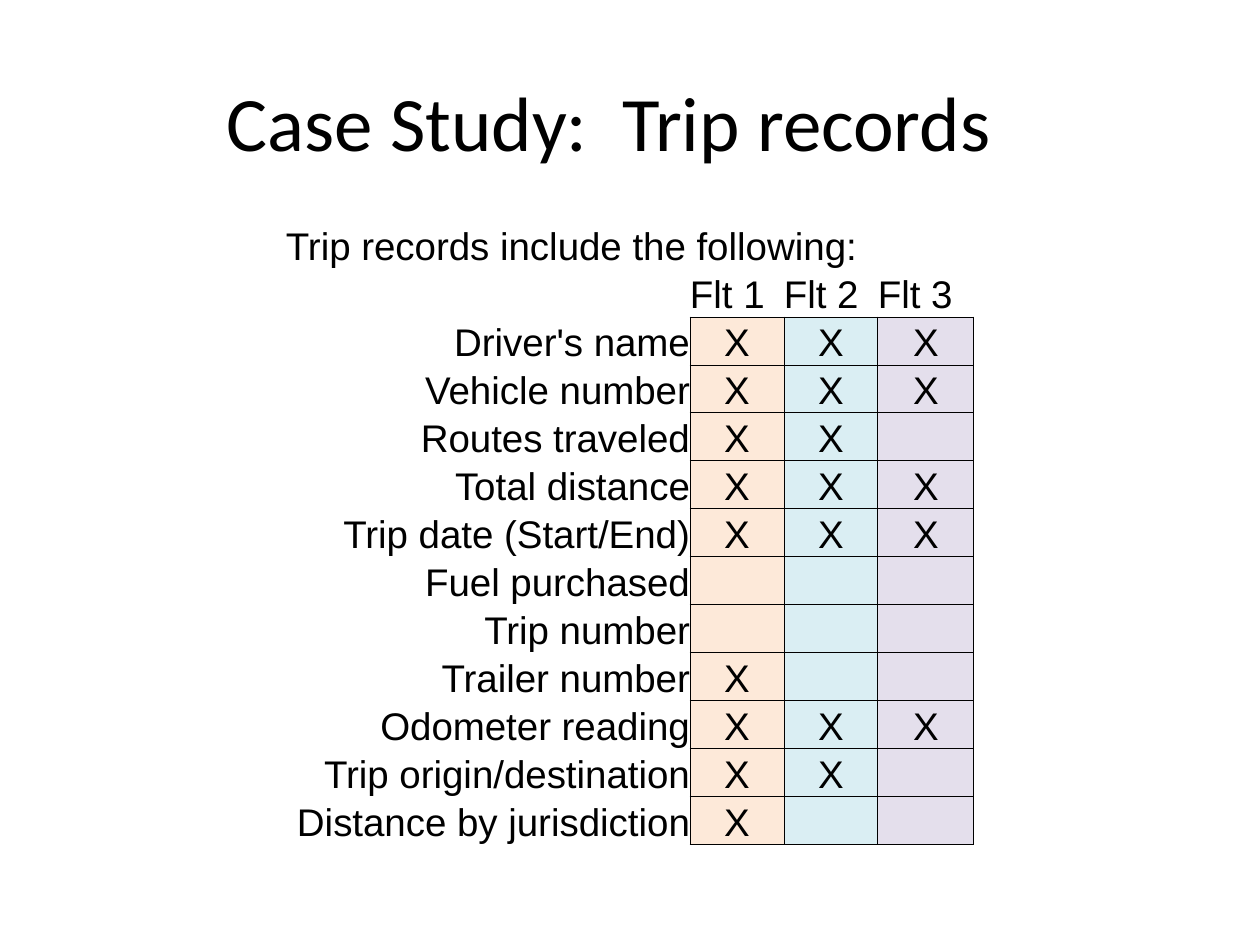
"""Build the trip records case study slide with its fleet checklist table."""
from lxml.etree import SubElement
from pptx import Presentation
from pptx.dml.color import RGBColor
from pptx.enum.text import MSO_ANCHOR, PP_ALIGN
from pptx.oxml.ns import qn
from pptx.util import Pt

SCALE = 914400 / 126
BLACK = "000000"
FLEET_FILLS = ["FDE9D9", "DAEEF3", "E4DFEC"]
COLUMN_WIDTHS = [404, 94, 94, 96]
ROW_HEIGHT = 48
RECORDS = [
    ("Driver's name", "X", "X", "X"),
    ("Vehicle number", "X", "X", "X"),
    ("Routes traveled", "X", "X", ""),
    ("Total distance", "X", "X", "X"),
    ("Trip date (Start/End)", "X", "X", "X"),
    ("Fuel purchased", "", "", ""),
    ("Trip number", "", "", ""),
    ("Trailer number", "X", "", ""),
    ("Odometer reading", "X", "X", "X"),
    ("Trip origin/destination", "X", "X", ""),
    ("Distance by jurisdiction", "X", "", ""),
]
ROWS = [("Trip records include the following:", "", "", ""), ("", "Flt 1", "Flt 2", "Flt 3"), *RECORDS]


def px(length):
    return round(length * SCALE)


def set_borders(cell, drawn_sides):
    properties = cell._tc.get_or_add_tcPr()
    for side in "LRTB":
        line = SubElement(properties, qn(f"a:ln{side}"), w=str(Pt(0.5)))
        if side in drawn_sides:
            fill = SubElement(line, qn("a:solidFill"))
            SubElement(fill, qn("a:srgbClr"), val=BLACK)
        else:
            SubElement(line, qn("a:noFill"))


deck = Presentation()
deck.slide_width, deck.slide_height = px(1260), px(945)
page = deck.slides.add_slide(deck.slide_layouts[5])

title = page.shapes.title
title.left, title.top, title.width, title.height = px(42), px(42), px(1134), px(158)
title.text_frame.text = "Case Study:  Trip records"
title.text_frame.vertical_anchor = MSO_ANCHOR.MIDDLE
para = title.text_frame.paragraphs[0]
para.alignment = PP_ALIGN.CENTER
span = para.runs[0]
span.font.name, span.font.size = "Calibri", Pt(44)
span.font.color.rgb = RGBColor.from_string(BLACK)

frame = page.shapes.add_table(
    len(ROWS), len(COLUMN_WIDTHS), px(286), px(221), px(sum(COLUMN_WIDTHS)), px(ROW_HEIGHT * len(ROWS))
)
table = frame.table
table.first_row = table.horz_banding = False
for column, width in zip(table.columns, COLUMN_WIDTHS):
    column.width = px(width)
for row in table.rows:
    row.height = px(ROW_HEIGHT)

for row_index, texts in enumerate(ROWS):
    for column_index, text in enumerate(texts):
        cell = table.cell(row_index, column_index)
        cell.margin_left = cell.margin_right = cell.margin_top = cell.margin_bottom = 0
        cell.vertical_anchor = MSO_ANCHOR.BOTTOM
        is_record = row_index > 1
        is_fleet = column_index > 0
        if is_record and is_fleet:
            set_borders(cell, "LRTB")
            cell.fill.solid()
            cell.fill.fore_color.rgb = RGBColor.from_string(FLEET_FILLS[column_index - 1])
        else:
            set_borders(cell, "R" if is_record else "B" if row_index == 1 and is_fleet else "")
            cell.fill.background()
        cell.text_frame.text = text
        para = cell.text_frame.paragraphs[0]
        if is_record:
            para.alignment = PP_ALIGN.CENTER if is_fleet else PP_ALIGN.RIGHT
        for span in para.runs:
            span.font.name, span.font.size = "Arial", Pt(22)
            span.font.color.rgb = RGBColor.from_string(BLACK)
table.cell(0, 0).merge(table.cell(0, len(COLUMN_WIDTHS) - 1))

deck.save("out.pptx")
